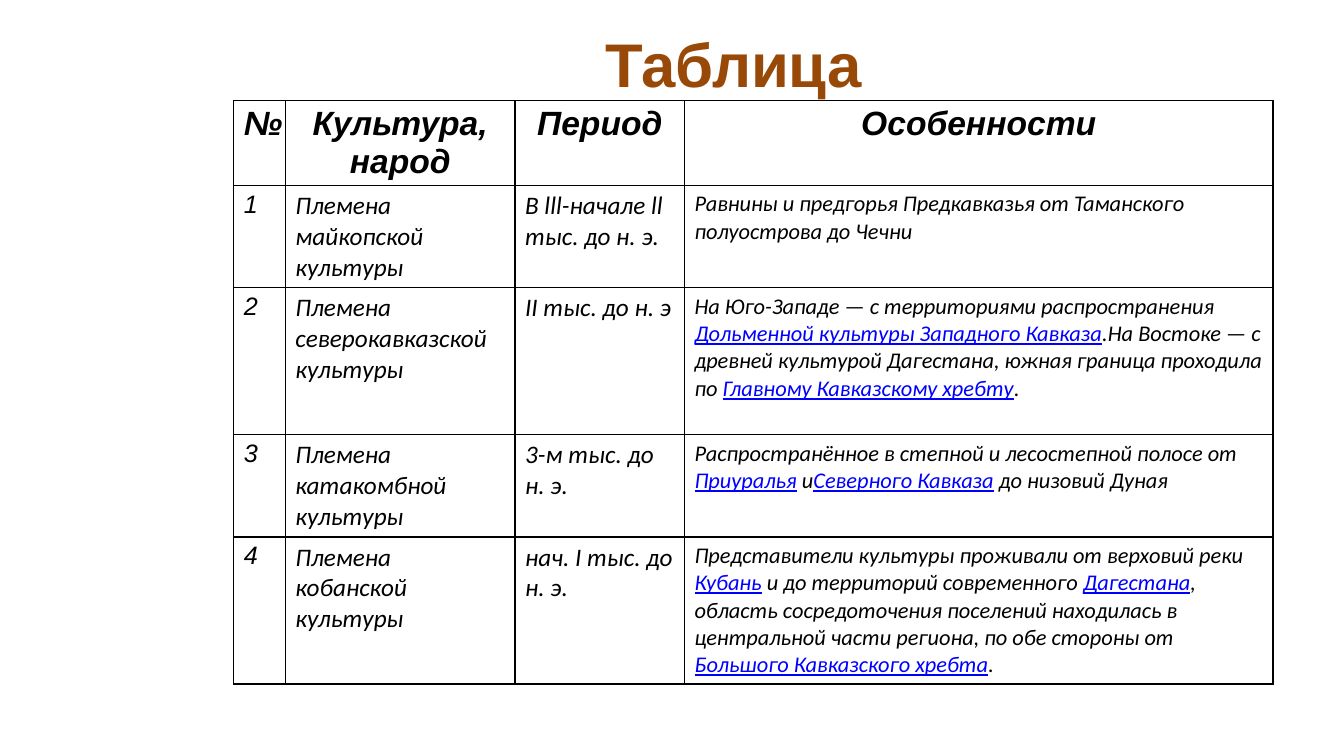
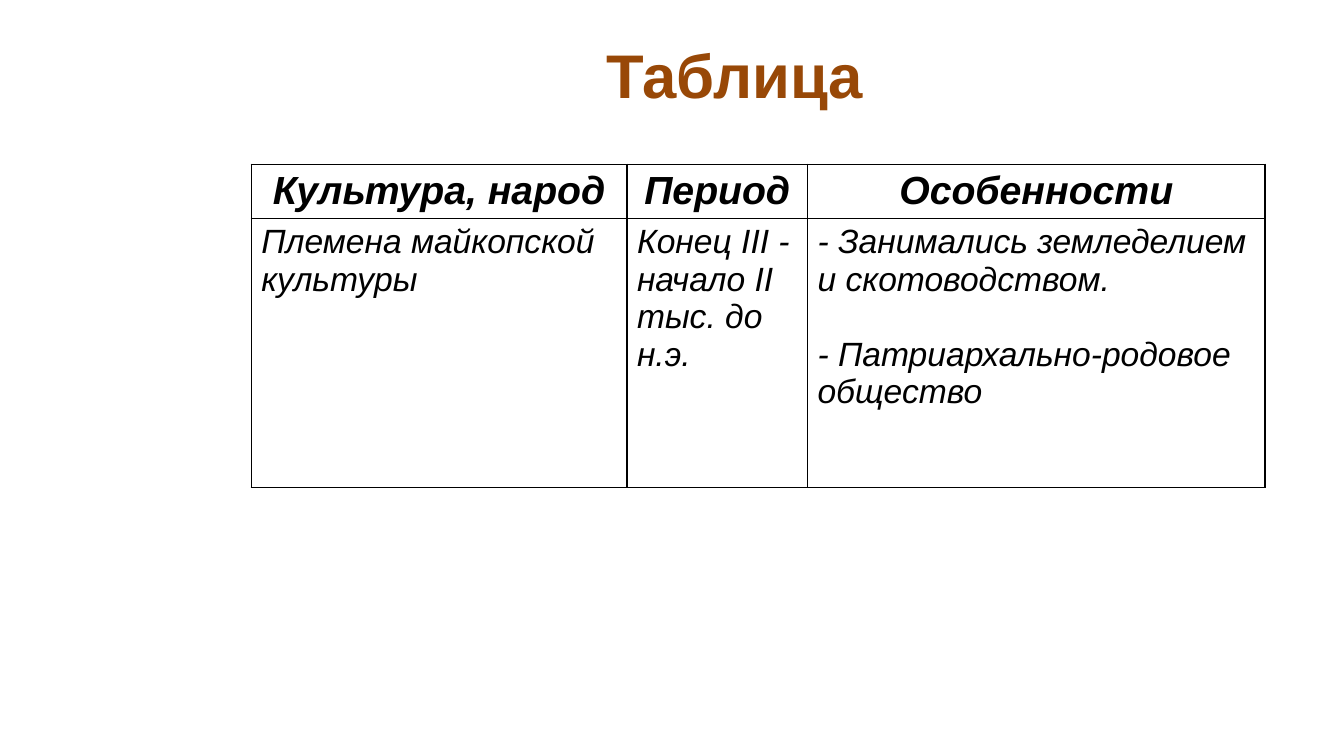
from lxml import etree
from pptx import Presentation
from pptx.dml.color import RGBColor
from pptx.enum.text import MSO_ANCHOR, PP_ALIGN
from pptx.oxml.ns import qn
from pptx.util import Cm, Pt

CENTER, LEFT = PP_ALIGN.CENTER, PP_ALIGN.LEFT
MIDDLE = MSO_ANCHOR.MIDDLE
BROWN, BLACK, BLUE = "984807", "000000", "0000FF"
TITLE_ONLY = 5
TITLE_SIZE = (28.04, 3.18)

TITLE = dict(name="Arial", size=Pt(44), bold=True, color=BROWN)
HEAD = dict(name="Arial", size=Pt(24), bold=True, italic=True, color=BLACK)
BIG_HEAD = dict(HEAD, size=Pt(28))
BIG_BODY = dict(HEAD, bold=False)
NUMBER = dict(BIG_BODY, size=Pt(18))
CULTURE = dict(NUMBER, name="Calibri")
FEATURE = dict(CULTURE, size=Pt(16))
LINK = dict(color=BLUE, underline=True)

# Text between bars is styled as a link.
CULTURES = [
    ["№", "Культура, народ", "Период", "Особенности"],
    ["1", "Племена майкопской культуры", "В lll-начале ll тыс. до н. э.",
     "Равнины и предгорья Предкавказья от Таманского полуострова до Чечни"],
    ["2", "Племена северокавказской культуры", "II тыс. до н. э",
     "На Юго-Западе — с территориями распространения "
     "|Дольменной культуры Западного Кавказа|.На Востоке — с древней "
     "культурой Дагестана, южная граница проходила по "
     "|Главному Кавказскому хребту|."],
    ["3", "Племена катакомбной культуры", "3-м тыс. до н. э.",
     "Распространённое в степной и лесостепной полосе от "
     "|Приуралья| и|Северного Кавказа| до низовий Дуная"],
    ["4", "Племена кобанской культуры", "нач. I тыс. до н. э.",
     "Представители культуры проживали от верховий реки |Кубань| и до "
     "территорий современного |Дагестана|, область сосредоточения "
     "поселений находилась в центральной части региона, по обе стороны "
     "от |Большого Кавказского хребта|."],
]
MAYKOP = [
    ["Культура, народ", "Период", "Особенности"],
    ["Племена майкопской культуры", "Конец III - начало II тыс. до н.э.",
     "- Занимались земледелием и скотоводством.\n"
     "- Патриархально-родовое общество"],
]


def rgb(color):
    return RGBColor.from_string(color)


def set_font(font, style):
    for key, value in style.items():
        if key == "color":
            font.color.rgb = rgb(value)
        else:
            setattr(font, key, value)


def add_title(s, left, top):
    title = s.shapes.title
    title.left, title.top = Cm(left), Cm(top)
    title.width, title.height = map(Cm, TITLE_SIZE)
    tf = title.text_frame
    tf.text, tf.vertical_anchor = "Таблица", MIDDLE
    p = tf.paragraphs[0]
    p.alignment = CENTER
    set_font(p.runs[0].font, TITLE)


def add_borders(cell):
    tc_pr = cell._tc.get_or_add_tcPr()
    for side in ("a:lnL", "a:lnR", "a:lnT", "a:lnB"):
        ln = etree.SubElement(tc_pr, qn(side), w=str(Pt(1)))
        fill = etree.SubElement(ln, qn("a:solidFill"))
        etree.SubElement(fill, qn("a:srgbClr"), val=BLACK)


def fill_cell(cell, text, style, align, gap):
    add_borders(cell)
    cell.fill.background()
    tf = cell.text_frame
    for i, line in enumerate(text.split("\n")):
        p = tf.add_paragraph() if i else tf.paragraphs[0]
        p.alignment = align
        if i:
            p.space_before = Pt(gap)
        for j, part in enumerate(line.split("|")):
            r = p.add_run()
            r.text = part
            set_font(r.font, {**style, **LINK} if j % 2 else style)


def add_grid(s, left, top, widths, heights, rows, head, columns, gap=0):
    """Place a ruled table; columns holds the body style of each column."""
    table = s.shapes.add_table(len(rows), len(widths), Cm(left), Cm(top),
                               Cm(sum(widths)), Cm(sum(heights))).table
    table.first_row = table.horz_banding = False
    for column, width in zip(table.columns, widths):
        column.width = Cm(width)
    for i, (row, height) in enumerate(zip(rows, heights)):
        table.rows[i].height = Cm(height)
        for j, text in enumerate(row):
            style, align = (columns[j], LEFT) if i else (head, CENTER)
            fill_cell(table.cell(i, j), text, style, align, gap)


def add_cultures_slide(prs):
    s = prs.slides.add_slide(prs.slide_layouts[TITLE_ONLY])
    add_title(s, 4.47, 0)
    add_grid(s, 5.89, 2.53, [1.3, 5.79, 4.27, 14.83],
             [2.14, 2.58, 3.7, 2.58, 3.7], CULTURES, HEAD,
             [NUMBER, CULTURE, CULTURE, FEATURE])


def add_maykop_slide(prs):
    s = prs.slides.add_slide(prs.slide_layouts[TITLE_ONLY])
    add_title(s, 4.5, 0.28)
    add_grid(s, 6.33, 4.14, [9.47, 4.55, 11.53], [1.36, 6.78],
             MAYKOP, BIG_HEAD, [BIG_BODY] * 3, gap=27)


def main():
    prs = Presentation()
    prs.slide_width, prs.slide_height = Cm(33.87), Cm(19.05)
    add_cultures_slide(prs)
    add_maykop_slide(prs)
    prs.save("out.pptx")


if __name__ == "__main__":
    main()
